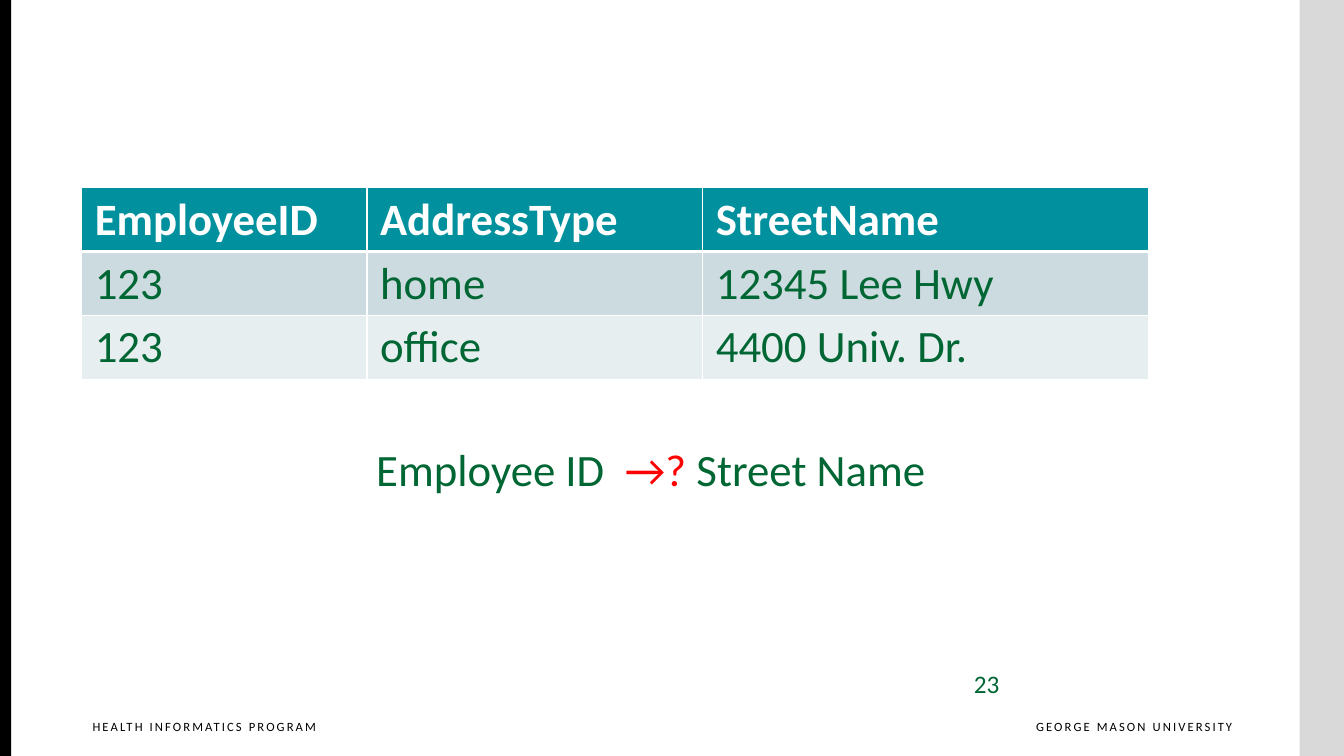
from dataclasses import dataclass

from lxml import etree
from pptx import Presentation
from pptx.dml.color import RGBColor
from pptx.enum import shapes, text
from pptx.oxml.ns import qn
from pptx.util import Inches, Pt


@dataclass(frozen=True)
class Theme:
    font: str = "Calibri"
    green: str = "006633"
    red: str = "FF0000"
    black: str = "000000"
    white: str = "FFFFFF"
    gray: str = "D9D9D9"
    header: str = "00909E"
    bands: tuple[str, str] = ("CCDBDF", "E7EEF0")
    body_size: int = 32
    number_size: int = 18
    footer_size: int = 9


@dataclass(frozen=True)
class Box:
    left: float
    top: float
    width: float
    height: float

    def emu(self) -> list[int]:
        return [Inches(v) for v in (self.left, self.top, self.width, self.height)]


@dataclass(frozen=True)
class Bar:
    box: Box
    color: str


@dataclass(frozen=True)
class Label:
    """One line of text, given as (words, colour) runs."""
    box: Box
    runs: tuple[tuple[str, str], ...]
    size: int
    align: text.PP_ALIGN = text.PP_ALIGN.LEFT
    spacing: float = 0
    right_inset: float = 0.1


THEME = Theme()
BARS = (
    Bar(Box(12.89, 0, 0.44, 7.5), THEME.gray),
    Bar(Box(0, 0, 0.11, 7.5), THEME.black),
)
LABELS = (
    Label(Box(9.87, 7.08, 2.35, 0.33), (("GEORGE MASON UNIVERSITY", THEME.black),),
          THEME.footer_size, text.PP_ALIGN.RIGHT, spacing=1.5, right_inset=0),
    Label(Box(0.82, 7.08, 2.54, 0.33), (("HEALTH INFORMATICS PROGRAM", THEME.black),),
          THEME.footer_size, spacing=1.5, right_inset=0),
    Label(Box(9.56, 6.58, 3.34, 0.52), (("23", THEME.green),), THEME.number_size),
    Label(Box(0.34, 4.33, 12.33, 1.18),
          (("Employee ID  ", THEME.green), ("→? ", THEME.red), ("Street Name ", THEME.green)),
          THEME.body_size, text.PP_ALIGN.CENTER),
)
TABLE_BOX = Box(0.81, 1.86, 10.57, 1.9)
COLUMN_WIDTHS = (2.83, 3.33, 4.42)
ADDRESSES = (
    ("EmployeeID", "AddressType", "StreetName"),
    ("123", "home", "12345 Lee Hwy"),
    ("123", "office", "4400 Univ. Dr."),
)


def rgb(color: str) -> RGBColor:
    return RGBColor.from_string(color)


def add_bar(slide, bar: Bar) -> None:
    sp = slide.shapes.add_shape(shapes.MSO_SHAPE.RECTANGLE, *bar.box.emu())
    sp.shadow.inherit = False
    sp.fill.solid()
    sp.fill.fore_color.rgb = rgb(bar.color)
    sp.line.fill.background()


def add_label(slide, label: Label) -> None:
    tf = slide.shapes.add_textbox(*label.box.emu()).text_frame
    tf.word_wrap = True
    tf.margin_right = Inches(label.right_inset)
    p = tf.paragraphs[0]
    p.alignment = label.align
    p.font.name, p.font.size = THEME.font, Pt(label.size)
    for words, color in label.runs:
        r = p.add_run()
        r.text = words
        r.font.color.rgb = rgb(color)
        if label.spacing:
            r.font._element.set("spc", str(round(label.spacing * 100)))


def add_borders(cell, bottom: float) -> None:
    """Draw white 1 pt sides, with the bottom one as wide as asked."""
    tc_pr = cell._tc.get_or_add_tcPr()
    for side, width in (("L", 1), ("R", 1), ("T", 1), ("B", bottom)):
        ln = etree.SubElement(tc_pr, qn(f"a:ln{side}"), w=str(Pt(width)))
        fill = etree.SubElement(ln, qn("a:solidFill"))
        etree.SubElement(fill, qn("a:srgbClr"), val=THEME.white)


def fill_cell(cell, words: str, row: int) -> None:
    is_header = row == 0
    add_borders(cell, bottom=3 if is_header else 1)
    cell.fill.solid()
    cell.fill.fore_color.rgb = rgb(THEME.header if is_header else THEME.bands[(row - 1) % 2])
    cell.margin_left = cell.margin_right = Inches(0.13)
    cell.text = words
    font = cell.text_frame.paragraphs[0].font
    font.name, font.size, font.bold = THEME.font, Pt(THEME.body_size), is_header
    font.color.rgb = rgb(THEME.white if is_header else THEME.green)


def add_address_table(slide) -> None:
    table = slide.shapes.add_table(len(ADDRESSES), len(COLUMN_WIDTHS), *TABLE_BOX.emu()).table
    for column, width in zip(table.columns, COLUMN_WIDTHS):
        column.width = Inches(width)
    for i, record in enumerate(ADDRESSES):
        for j, words in enumerate(record):
            fill_cell(table.cell(i, j), words, i)


def main() -> None:
    prs = Presentation()
    prs.slide_width, prs.slide_height = Inches(13.33), Inches(7.5)
    slide = prs.slides.add_slide(prs.slide_layouts[6])
    for bar in BARS:
        add_bar(slide, bar)
    for label in LABELS:
        add_label(slide, label)
    add_address_table(slide)
    prs.save("out.pptx")


if __name__ == "__main__":
    main()
